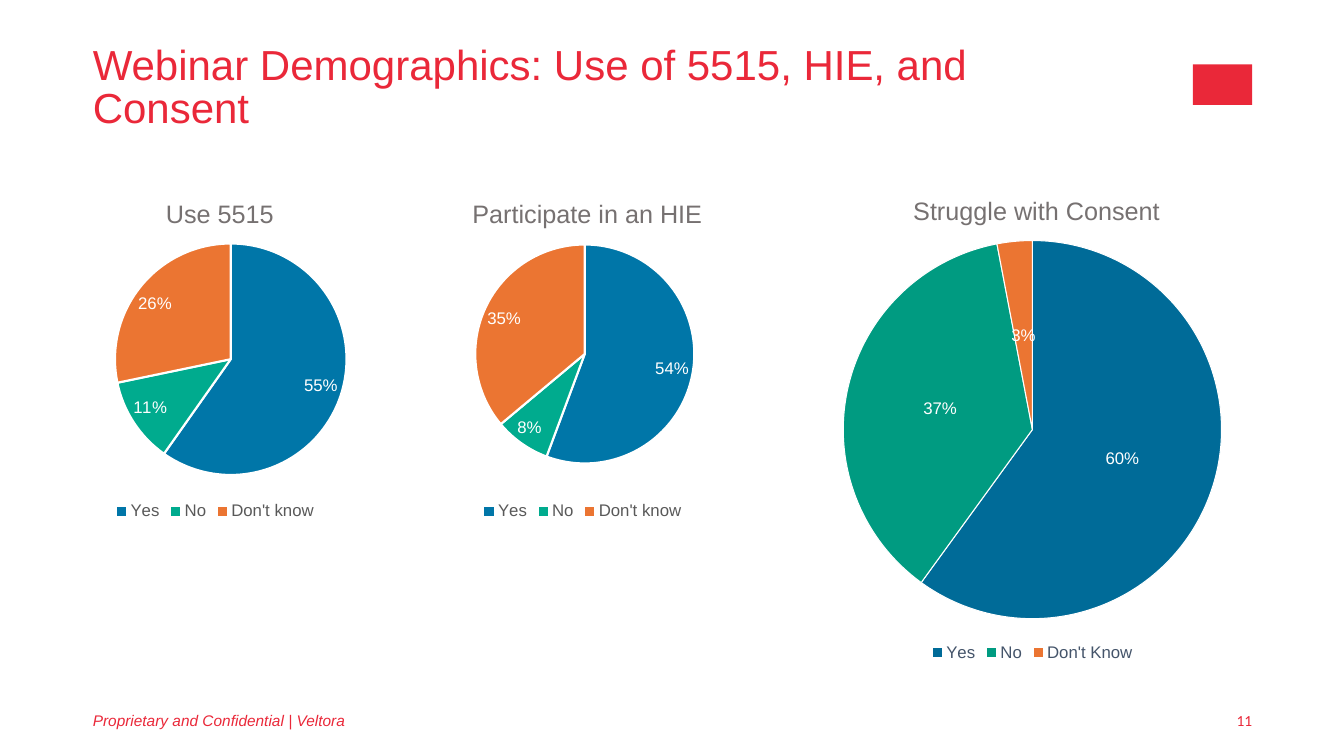
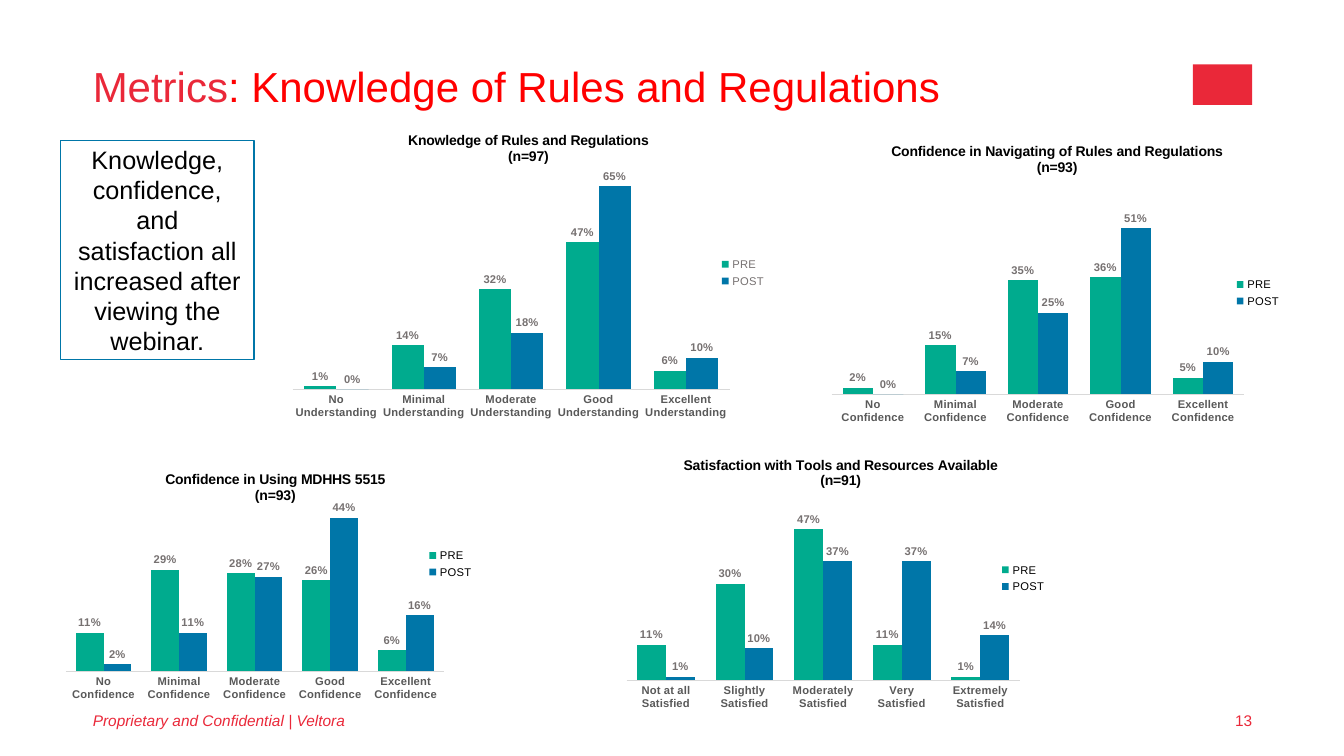
"""Build two slides of webinar survey results with pie and column charts."""
from dataclasses import dataclass
from typing import Any, Optional

import lxml.etree
import pptx
import pptx.chart.data
import pptx.dml.color
import pptx.enum.chart
import pptx.enum.shapes
import pptx.enum.text
import pptx.util

Inches = pptx.util.Inches
Pt = pptx.util.Pt
ALIGN = pptx.enum.text.PP_ALIGN
LABEL = pptx.enum.chart.XL_LABEL_POSITION
LEGEND = pptx.enum.chart.XL_LEGEND_POSITION
CHART = pptx.enum.chart.XL_CHART_TYPE
C = "{http://schemas.openxmlformats.org/drawingml/2006/chart}"

COLORS = {
    "brand": "EA2839", "red": "FF0000", "white": "FFFFFF", "black": "000000",
    "blue": "0076A8", "green": "00AB8E", "orange": "EB7532",
    "deep_blue": "006B98", "deep_green": "009B81",
    "gray": "767171", "dark_gray": "595959", "slate": "44546A", "axis": "D9D9D9",
}
FOOTER = "Proprietary and Confidential | Veltora"


@dataclass(frozen=True)
class Pie:
    title: str
    box: tuple[float, float, float, float]
    title_at: tuple[float, float]
    plot: tuple[float, float, float, float]
    cats: tuple[str, ...]
    values: tuple[float, ...]
    fills: tuple[str, ...] = ("blue", "green", "orange")
    border: float = 1.5
    legend_color: str = "dark_gray"
    percent: bool = False


@dataclass(frozen=True)
class Columns:
    title: str
    box: tuple[float, float, float, float]
    title_at: tuple[float, float]
    legend_at: tuple[float, float]
    plot_top: float
    plot_height: float
    top_value: float
    cats: tuple[str, ...]
    pre: tuple[float, ...]
    post: tuple[float, ...]
    legend_color: str = "black"


def levels(noun: str, names: str) -> tuple[str, ...]:
    return tuple(f"{name}\n{noun}" for name in names.split(","))


GRADES = "No,Minimal,Moderate,Good,Excellent"
CONFIDENCE = levels("Confidence", GRADES)

PIES = (
    Pie("Struggle with Consent", (7.56, 1.68, 5.36, 4.92), (9.01, 1.88),
        (0.15, 0.14, 0.7, 0.77), ("Yes", "No", "Don't Know"), (60, 37, 3),
        ("deep_blue", "deep_green", "orange"), 0.75, "slate", True),
    Pie("Participate in an HIE", (3.73, 1.72, 4.1, 3.48), (4.64, 1.91),
        (0.24, 0.2, 0.53, 0.63), ("Yes", "No", "Don't know"), (0.54, 0.08, 0.35)),
    Pie("Use 5515", (0.42, 1.72, 3.43, 3.48), (1.6, 1.91),
        (0.21, 0.2, 0.67, 0.66), ("Yes", "No", "Don't know"), (0.55, 0.11, 0.26)),
)
COLUMNS = (
    Columns("Knowledge of Rules and Regulations\n(n=97)", (2.83, 0.89, 4.87, 3.34),
            (4.02, 1.27), (7.12, 2.52), 0.24, 0.65, 0.7,
            levels("Understanding", GRADES),
            (0.01, 0.14, 0.32, 0.47, 0.06), (0, 0.07, 0.18, 0.65, 0.1), "gray"),
    Columns("Confidence in Navigating of Rules and Regulations\n(n=93)",
            (8.18, 1.24, 4.6, 3.07), (8.81, 1.38), (12.23, 2.72), 0.24, 0.63, 0.6,
            CONFIDENCE, (0.02, 0.15, 0.35, 0.36, 0.05), (0, 0.07, 0.25, 0.51, 0.1)),
    Columns("Confidence in Using MDHHS 5515\n(n=93)", (0.59, 4.24, 4.21, 2.75),
            (1.61, 4.63), (4.22, 5.41), 0.25, 0.63, 0.5,
            CONFIDENCE, (0.11, 0.29, 0.28, 0.26, 0.06), (0.02, 0.11, 0.27, 0.44, 0.16)),
    Columns("Satisfaction with Tools and Resources Available\n(n=91)",
            (6.15, 4.33, 4.38, 2.75), (6.75, 4.49), (9.9, 5.55), 0.3, 0.58, 0.5,
            levels("Satisfied", "Not at all,Slightly,Moderately,Very,Extremely"),
            (0.11, 0.3, 0.47, 0.11, 0.01), (0.01, 0.1, 0.37, 0.37, 0.14)),
)


def rgb(name: str) -> pptx.dml.color.RGBColor:
    return pptx.dml.color.RGBColor.from_string(COLORS[name])


def style(font: Any, size: float, color: str, bold: bool = False,
          italic: bool = False, name: str = "Arial") -> None:
    font.size, font.bold, font.italic, font.name = Pt(size), bold, italic, name
    font.color.rgb = rgb(color)


def write(tf: Any, text: str, *, size: float, color: str, align: Optional[Any] = None,
          spacing: Optional[float] = None, **font: Any) -> None:
    for i, line in enumerate(text.split("\n")):
        p = tf.add_paragraph() if i else tf.paragraphs[-1]
        p.alignment = align
        p.line_spacing = spacing
        r = p.add_run()
        r.text = line
        style(r.font, size, color, **font)


def text_box(s: Any, box: tuple[float, float, float, float]) -> Any:
    tf = s.shapes.add_textbox(*map(Inches, box)).text_frame
    tf.word_wrap = True
    tf.vertical_anchor = pptx.enum.text.MSO_ANCHOR.MIDDLE
    tf.margin_left = tf.margin_right = tf.margin_top = tf.margin_bottom = 0
    return tf


def rectangle(s: Any, box: tuple[float, float, float, float], fill: str) -> Any:
    sp = s.shapes.add_shape(pptx.enum.shapes.MSO_SHAPE.RECTANGLE, *map(Inches, box))
    sp.shadow.inherit = False
    sp.fill.solid()
    sp.fill.fore_color.rgb = rgb(fill)
    sp.line.fill.background()
    return sp


def add_slide(prs: Any, title: tuple[tuple[str, str], ...], number: str,
              number_font: str = "Arial") -> Any:
    s = prs.slides.add_slide(prs.slide_layouts[6])
    rectangle(s, (11.83, 0.64, 0.59, 0.4), "brand")
    tf = text_box(s, (0.92, 0.16, 10.25, 1.45))
    for text, color in title:
        write(tf, text, size=30, color=color, spacing=0.85)
    write(text_box(s, (0.92, 6.95, 3.75, 0.4)), FOOTER, size=11, color="brand", italic=True)
    write(text_box(s, (10.67, 6.95, 1.75, 0.4)), number, size=11, color="brand",
          align=ALIGN.RIGHT, name=number_font)
    return s


def place(parent: Any, index: int, **values: Any) -> None:
    for old in parent.findall(C + "layout"):
        parent.remove(old)
    layout = lxml.etree.Element(C + "layout")
    manual = lxml.etree.SubElement(layout, C + "manualLayout")
    if "w" in values:
        values = {"layoutTarget": "inner", "xMode": "edge", "yMode": "edge", **values}
    else:
        values = {"xMode": "edge", "yMode": "edge", **values}
    for tag, value in values.items():
        lxml.etree.SubElement(manual, C + tag).set("val", str(value))
    parent.insert(index, layout)


def place_at(chart: Any, tag: str, box: tuple[float, float, float, float],
             at: tuple[float, float]) -> None:
    place(chart.element.find(f".//{C}{tag}"), 1,
          x=round((at[0] - box[0]) / box[2], 3), y=round((at[1] - box[1]) / box[3], 3))


def add_chart(s: Any, kind: Any, spec_: Any, series: dict[str, tuple[float, ...]],
              plot: tuple[float, float, float, float], title_format: dict[str, Any],
              legend_side: Any, legend_size: float) -> Any:
    data = pptx.chart.data.CategoryChartData(number_format="0%")
    data.categories = spec_.cats
    for name, values in series.items():
        data.add_series(name, values)
    chart = s.shapes.add_chart(kind, *map(Inches, spec_.box), data).chart
    style(chart.font, 10, "black")
    chart.has_title = True
    write(chart.chart_title.text_frame, spec_.title, **title_format)
    chart.has_legend = True
    chart.legend.position = legend_side
    chart.legend.include_in_layout = False
    style(chart.legend.font, legend_size, spec_.legend_color)
    place_at(chart, "title", spec_.box, spec_.title_at)
    place(chart.element.find(f".//{C}plotArea"), 0, **dict(zip("xywh", plot)))
    return chart


def add_labels(plot: Any, size: float, color: str, position: Any, bold: bool = False) -> Any:
    plot.has_data_labels = True
    labels = plot.data_labels
    style(labels.font, size, color, bold)
    labels.number_format, labels.number_format_is_linked = "0%", False
    labels.position = position
    return labels


def add_pie(s: Any, pie: Pie) -> None:
    chart = add_chart(s, CHART.PIE, pie, {"Series 1": pie.values}, pie.plot,
                      {"size": 18, "color": "gray"}, LEGEND.BOTTOM, 12)
    plot = chart.plots[0]
    plot.vary_by_categories = True
    labels = add_labels(plot, 12, "white", LABEL.CENTER if pie.percent else LABEL.BEST_FIT)
    labels.show_percentage, labels.show_value = pie.percent, not pie.percent
    for i, color in enumerate(pie.fills):
        fmt = plot.series[0].points[i].format
        fmt.fill.solid()
        fmt.fill.fore_color.rgb = rgb(color)
        fmt.line.color.rgb = rgb("white")
        fmt.line.width = Pt(pie.border)


def add_columns(s: Any, col: Columns) -> None:
    chart = add_chart(s, CHART.COLUMN_CLUSTERED, col, {"PRE": col.pre, "POST": col.post},
                      (0.015, col.plot_top, 0.89, col.plot_height),
                      {"size": 10, "color": "black", "bold": True}, LEGEND.RIGHT, 8)
    place_at(chart, "legend", col.box, col.legend_at)
    plot = chart.plots[0]
    plot.vary_by_categories = False
    plot.gap_width, plot.overlap = 72, 0
    add_labels(plot, 8, "gray", LABEL.OUTSIDE_END, bold=True).show_value = True
    for series, color in zip(plot.series, ("green", "blue")):
        series.format.fill.solid()
        series.format.fill.fore_color.rgb = rgb(color)
    axis = chart.value_axis
    axis.minimum_scale, axis.maximum_scale = 0, col.top_value
    axis.has_major_gridlines = False
    axis.visible = False
    axis = chart.category_axis
    axis.major_tick_mark = pptx.enum.chart.XL_TICK_MARK.NONE
    axis.format.line.color.rgb = rgb("axis")
    axis.format.line.width = Pt(0.75)
    style(axis.tick_labels.font, 8, "dark_gray", bold=True)


def main() -> None:
    prs = pptx.Presentation()
    prs.slide_width, prs.slide_height = Inches(13.33), Inches(7.5)

    s = add_slide(prs, (("Webinar Demographics: Use of 5515, HIE, and Consent", "brand"),),
                  "11", "Calibri")
    for pie in PIES:
        add_pie(s, pie)

    s = add_slide(prs, (("Metrics", "brand"), (": Knowledge of Rules and Regulations", "red")),
                  "13")
    for col in COLUMNS:
        add_columns(s, col)
    sp = rectangle(s, (0.6, 1.39, 1.92, 2.18), "white")
    sp.line.color.rgb = rgb("blue")
    sp.line.width = Pt(0.85)
    tf = sp.text_frame
    tf.word_wrap = True
    tf.vertical_anchor = pptx.enum.text.MSO_ANCHOR.MIDDLE
    write(tf, "Knowledge, confidence, and satisfaction all increased after viewing the webinar.",
          size=18, color="black", align=ALIGN.CENTER)
    prs.save("out.pptx")


if __name__ == "__main__":
    main()
